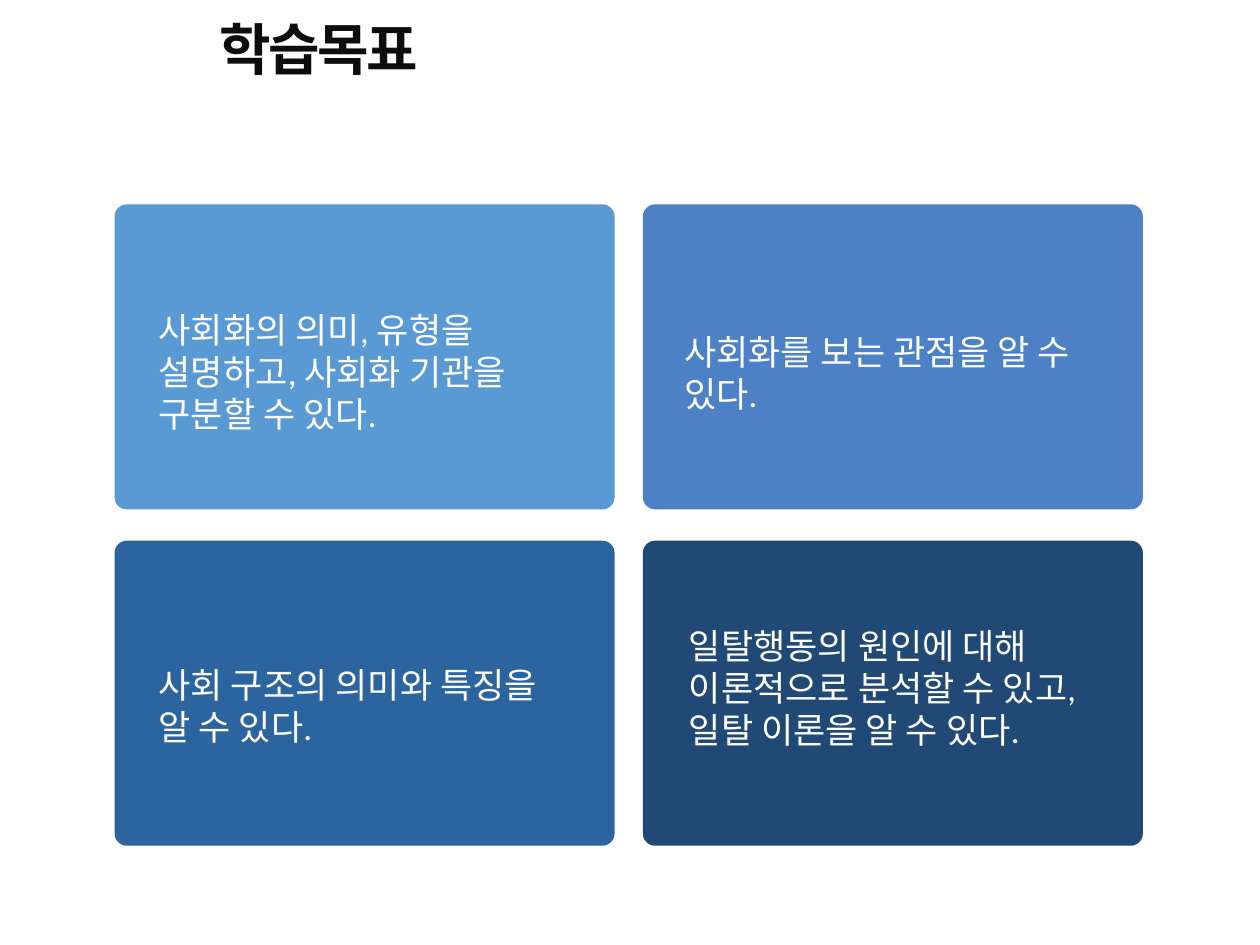
from lxml import etree
from pptx import Presentation
from pptx import util as u
from pptx.dml.color import RGBColor
from pptx.enum import shapes, text
from pptx.oxml.ns import qn

COLORS = {
    "title": "0D0D0D", "text": "FFFFFF",
    "sky": "599AD5", "blue": "4C81C5", "deep": "2C649F", "navy": "204976",
}
TITLE_FONT = "Noto Sans CJK KR"

deck = Presentation()
deck.slide_width, deck.slide_height = u.Cm(25.4), u.Cm(19.05)
page = deck.slides.add_slide(deck.slide_layouts[5])

# Title
title = page.shapes.title
title.left, title.top = u.Cm(4.17), u.Cm(-0.03)
title.width, title.height = u.Cm(20.37), u.Cm(2.16)
title.text_frame.vertical_anchor = text.MSO_ANCHOR.MIDDLE
para = title.text_frame.paragraphs[0]
para.alignment = text.PP_ALIGN.LEFT
para.line_spacing = 0.9
span = para.add_run()
span.text = "학습목표"
span.font.size = u.Pt(32)
span.font.bold = True
span.font.color.rgb = RGBColor.from_string(COLORS["title"])
span.font.name = TITLE_FONT
properties = span._r.get_or_add_rPr()
properties.set("spc", "-150")
east_asian = etree.Element(qn("a:ea"), typeface=TITLE_FONT)
properties.find(qn("a:latin")).addnext(east_asian)

# Goal cards: two by two grid
LEFT, TOP, WIDTH, HEIGHT = 2.31, 4.12, 10.08, 6.15
STEP_X, STEP_Y = 10.65, 6.78
# colour, wording, then left, top, width and height of the text
goals = [
    ("sky", "사회화의 의미, 유형을 설명하고, 사회화 기관을 구분할 수 있다.",
     (2.95, 6.1, 9.14, 2.82)),
    ("blue", "사회화를 보는 관점을 알 수 있다.", (13.54, 6.53, 8.81, 1.96)),
    ("deep", "사회 구조의 의미와 특징을 알 수 있다.", (2.95, 13.26, 8.76, 1.96)),
    ("navy", "일탈행동의 원인에 대해 이론적으로 분석할 수 있고, 일탈 이론을 알 수 있다.",
     (13.64, 12.47, 8.71, 2.82)),
]
for index, (color, wording, place) in enumerate(goals):
    row, column = divmod(index, 2)
    card = page.shapes.add_shape(
        shapes.MSO_SHAPE.ROUNDED_RECTANGLE,
        u.Cm(LEFT + column * STEP_X), u.Cm(TOP + row * STEP_Y),
        u.Cm(WIDTH), u.Cm(HEIGHT))
    card.adjustments[0] = 0.04
    card.shadow.inherit = False
    card.fill.solid()
    card.fill.fore_color.rgb = RGBColor.from_string(COLORS[color])
    card.line.fill.background()

    box = page.shapes.add_textbox(*(u.Cm(length) for length in place))
    box.text_frame.word_wrap = True
    box.text_frame.auto_size = text.MSO_AUTO_SIZE.SHAPE_TO_FIT_TEXT
    span = box.text_frame.paragraphs[0].add_run()
    span.text = wording
    span.font.size = u.Pt(20)
    span.font.name = "Calibri"
    span.font.color.rgb = RGBColor.from_string(COLORS["text"])

deck.save("out.pptx")
